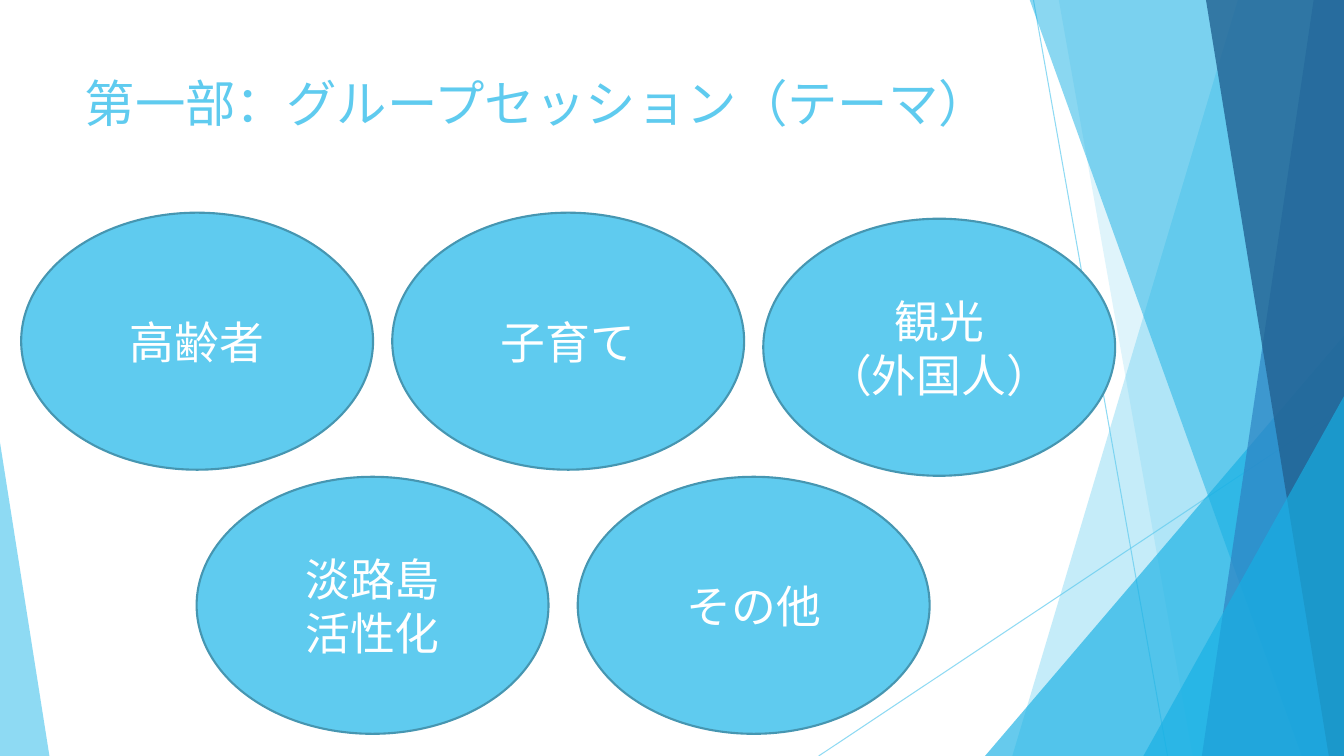
from dataclasses import dataclass

from lxml import etree
from pptx import Presentation
from pptx.dml.color import RGBColor
from pptx.enum.shapes import MSO_CONNECTOR, MSO_SHAPE
from pptx.enum.text import MSO_ANCHOR, MSO_AUTO_SIZE, PP_ALIGN
from pptx.oxml.ns import qn
from pptx.util import Inches, Pt

OVAL = MSO_SHAPE.OVAL
TRIANGLE = MSO_SHAPE.ISOSCELES_TRIANGLE
STRAIGHT = MSO_CONNECTOR.STRAIGHT
TOP, MIDDLE = MSO_ANCHOR.TOP, MSO_ANCHOR.MIDDLE
LEFT, CENTER = PP_ALIGN.LEFT, PP_ALIGN.CENTER
NO_AUTOFIT = MSO_AUTO_SIZE.NONE

SKY = RGBColor(0x5F, 0xCB, 0xEF)
CYAN = RGBColor(0x17, 0xB0, 0xE4)
BLUE = RGBColor(0x2E, 0x83, 0xC3)
NAVY = RGBColor(0x22, 0x62, 0x92)
TEAL = RGBColor(0x46, 0x96, 0xB1)
WHITE = RGBColor(0xFF, 0xFF, 0xFF)

FONT = "Cabin"
SLIDE_W, SLIDE_H = 13.33, 7.5
BAND_TOP = -0.01
THEME_W, THEME_H = 3.49, 2.55


@dataclass(frozen=True)
class Ray:
    start: tuple[float, float]
    end: tuple[float, float]


@dataclass(frozen=True)
class Band:
    """Strip reaching the right slide edge, given by the ends of its left side."""
    top_x: float
    bottom_x: float
    color: RGBColor
    opacity: int


@dataclass(frozen=True)
class Wedge:
    """Triangle standing on the bottom edge; apex is 0 for left, 1 for right."""
    left: float
    top: float
    width: float
    apex: int
    color: RGBColor
    opacity: int


@dataclass(frozen=True)
class Theme:
    text: str
    left: float
    top: float


RAYS = [Ray((10.25, 0), (11.58, SLIDE_H)), Ray((SLIDE_W, 4.03), (8.12, SLIDE_H))]
FACETS = [
    Band(12.28, 10.04, SKY, 36),
    Band(10.5, 11.83, SKY, 20),
    Wedge(9.77, 3.33, 3.56, 1, CYAN, 66),
    Band(10.21, 12.91, CYAN, 50),
    Band(13.03, 11.92, BLUE, 70),
    Band(11.96, 13.18, NAVY, 80),
    Wedge(11.34, 3.93, 1.99, 1, CYAN, 66),
    Wedge(0, 4.39, 0.49, 0, SKY, 70),
]
THEMES = [
    Theme("高齢者", 0.21, 2.11),
    Theme("観光\n（外国人）", 7.57, 2.17),
    Theme("子育て", 3.89, 2.11),
    Theme("淡路島\n活性化", 1.95, 4.73),
    Theme("その他", 5.73, 4.73),
]


def set_opacity(fill_owner, percent: int) -> None:
    color = next(fill_owner.iter(qn("a:srgbClr")))
    etree.SubElement(color, qn("a:alpha")).set("val", str(percent * 1000))


def write(shape, text: str, *, size: int, color: RGBColor, align, anchor) -> None:
    frame = shape.text_frame
    frame.text = text
    frame.word_wrap = True
    frame.auto_size = NO_AUTOFIT
    frame.vertical_anchor = anchor
    for paragraph in frame.paragraphs:
        paragraph.alignment = align
        font = paragraph.font
        for run in paragraph.runs:
            font = run.font
            font.name, font.size = FONT, Pt(size)
            font.color.rgb = color


def draw_ray(slide, ray: Ray) -> None:
    ends = [Inches(value) for value in ray.start + ray.end]
    connector = slide.shapes.add_connector(STRAIGHT, *ends)
    connector.line.width = Pt(0.75)
    connector.line.color.rgb = SKY
    set_opacity(connector.element, 70)
    properties = connector.element.find(qn("p:spPr"))
    etree.SubElement(properties, qn("a:effectLst"))


def draw_facet(slide, facet: Band | Wedge) -> None:
    if isinstance(facet, Band):
        builder = slide.shapes.build_freeform(Inches(facet.top_x), Inches(BAND_TOP))
        corners = [(SLIDE_W, BAND_TOP), (SLIDE_W, SLIDE_H), (facet.bottom_x, SLIDE_H)]
        builder.add_line_segments([(Inches(x), Inches(y)) for x, y in corners])
        shape = builder.convert_to_shape()
    else:
        shape = slide.shapes.add_shape(
            TRIANGLE, Inches(facet.left), Inches(facet.top),
            Inches(facet.width), Inches(SLIDE_H - facet.top))
        shape.adjustments[0] = facet.apex
    shape.shadow.inherit = False
    shape.fill.solid()
    shape.fill.fore_color.rgb = facet.color
    set_opacity(shape.element, facet.opacity)
    shape.line.fill.background()


def draw_theme(slide, theme: Theme) -> None:
    oval = slide.shapes.add_shape(
        OVAL, Inches(theme.left), Inches(theme.top), Inches(THEME_W), Inches(THEME_H))
    oval.shadow.inherit = False
    oval.fill.solid()
    oval.fill.fore_color.rgb = SKY
    oval.line.color.rgb = TEAL
    oval.line.width = Pt(1.5)
    write(oval, theme.text, size=32, color=WHITE, align=CENTER, anchor=MIDDLE)


def place_title(slide, text: str) -> None:
    """Fills the title placeholder and brings it in front of the backdrop."""
    title = slide.shapes.title
    title.left, title.top = Inches(0.74), Inches(0.67)
    title.width, title.height = Inches(9.4), Inches(1.44)
    write(title, text, size=36, color=SKY, align=LEFT, anchor=TOP)
    title.element.getparent().append(title.element)


def main() -> None:
    presentation = Presentation()
    presentation.slide_width = Inches(SLIDE_W)
    presentation.slide_height = Inches(SLIDE_H)
    title_only = presentation.slide_layouts.get_by_name("Title Only")
    slide = presentation.slides.add_slide(title_only)
    for ray in RAYS:
        draw_ray(slide, ray)
    for facet in FACETS:
        draw_facet(slide, facet)
    place_title(slide, "第一部：グループセッション（テーマ）")
    for theme in THEMES:
        draw_theme(slide, theme)
    presentation.save("out.pptx")


if __name__ == "__main__":
    main()
